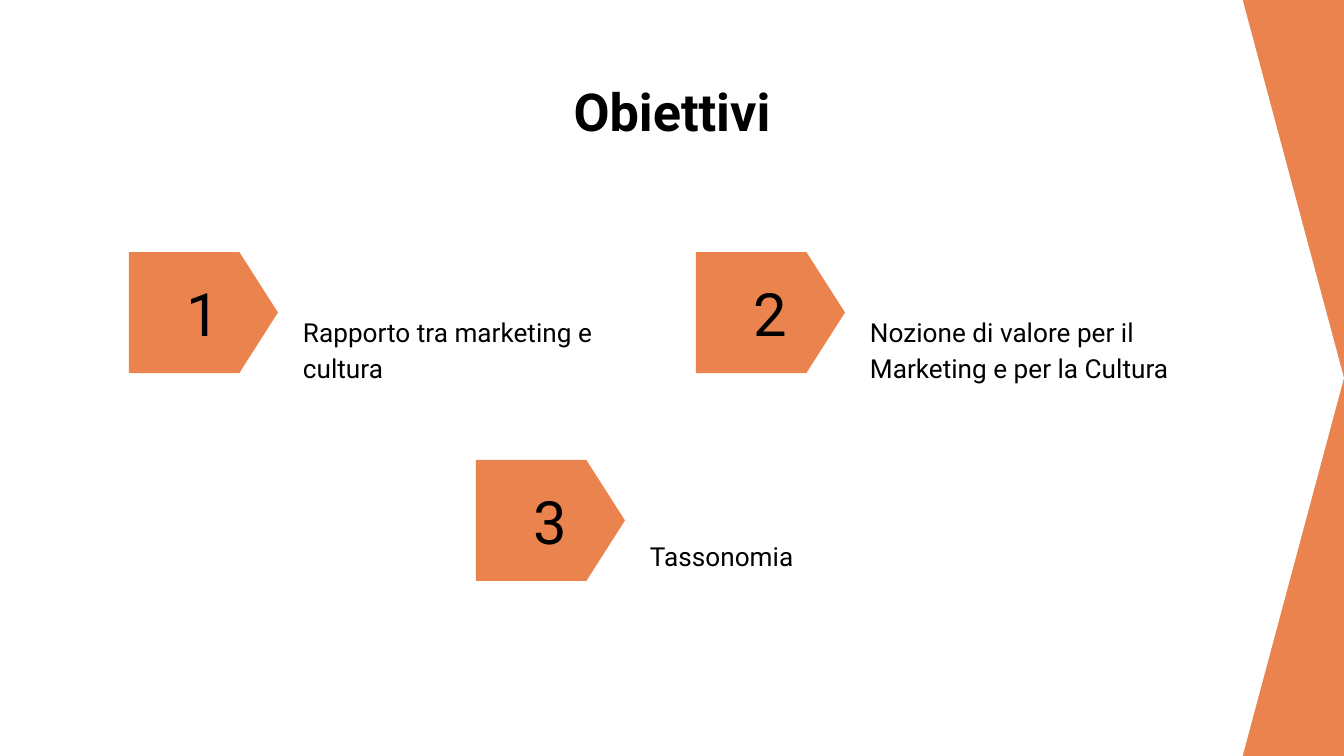
from pptx import Presentation
from pptx.dml.color import RGBColor
from pptx.enum.shapes import MSO_SHAPE
from pptx.enum.text import MSO_ANCHOR, PP_ALIGN
from pptx.util import Pt

PENTAGON = MSO_SHAPE.PENTAGON
TOP, MIDDLE = MSO_ANCHOR.TOP, MSO_ANCHOR.MIDDLE
LEFT, CENTER = PP_ALIGN.LEFT, PP_ALIGN.CENTER

FONT = "Roboto"
ORANGE, WHITE, BLACK = "EB834E", "FFFFFF", "000000"
WIDTH, HEIGHT = 1344, 756
ARROW_W, ARROW_H = 149, 121
NUMBER_SIZE = 85
LABEL_DX, LABEL_W, LABEL_H = 161, 349, 54
INSET = 13

TITLE = "Obiettivi"
# arrow left, arrow top, label top, label
GOALS = [
    (129, 252, 321, "Rapporto tra marketing e cultura"),
    (696, 252, 321, "Nozione di valore per il Marketing e per la Cultura"),
    (476, 460, 527, "Tassonomia"),
]


def px(n):
    """Turn pixels into EMU."""
    return round(n * 9144000 / WIDTH)


def color(value):
    """Turn a hex string into a colour."""
    return RGBColor.from_string(value)


def add_arrow(s, x, y, w, h, fill, point):
    """Add a plain arrow-ended block."""
    sp = s.shapes.add_shape(PENTAGON, px(x), px(y), px(w), px(h))
    sp.adjustments[0] = point
    sp.shadow.inherit = False
    sp.fill.solid()
    sp.fill.fore_color.rgb = color(fill)
    sp.line.fill.background()


def add_text(s, x, y, w, h, text, size, align, anchor=MIDDLE, bold=False, spacing=1.0):
    """Add a text box holding one run."""
    tf = s.shapes.add_textbox(px(x), px(y), px(w), px(h)).text_frame
    tf.word_wrap = True
    tf.vertical_anchor = anchor
    tf.margin_left = tf.margin_right = tf.margin_top = tf.margin_bottom = px(INSET)
    p = tf.paragraphs[0]
    p.alignment = align
    p.line_spacing = spacing
    r = p.add_run()
    r.text = text
    r.font.name = FONT
    r.font.size = Pt(size)
    r.font.bold = bold
    r.font.color.rgb = color(BLACK)


def main():
    """Build the goals slide."""
    prs = Presentation()
    prs.slide_width, prs.slide_height = px(WIDTH), px(HEIGHT)
    s = prs.slides.add_slide(prs.slide_layouts[6])
    s.background.fill.solid()
    s.background.fill.fore_color.rgb = color(ORANGE)

    add_arrow(s, 0, 0, WIDTH, HEIGHT, WHITE, 0.134)
    title_x = 105
    add_text(s, title_x, 66, WIDTH - 2 * title_x, 85, TITLE, 28, CENTER, TOP, bold=True)

    number_dx, number_dy = (ARROW_W - NUMBER_SIZE) // 2, (ARROW_H - NUMBER_SIZE) // 2
    for number, (x, y, label_y, label) in enumerate(GOALS, 1):
        add_arrow(s, x, y, ARROW_W, ARROW_H, ORANGE, 0.319)
        add_text(s, x + LABEL_DX, label_y, LABEL_W, LABEL_H, label, 14, LEFT, spacing=1.15)
        add_text(s, x + number_dx, y + number_dy, NUMBER_SIZE, NUMBER_SIZE,
                 str(number), 32, CENTER)

    prs.save("out.pptx")


if __name__ == "__main__":
    main()
